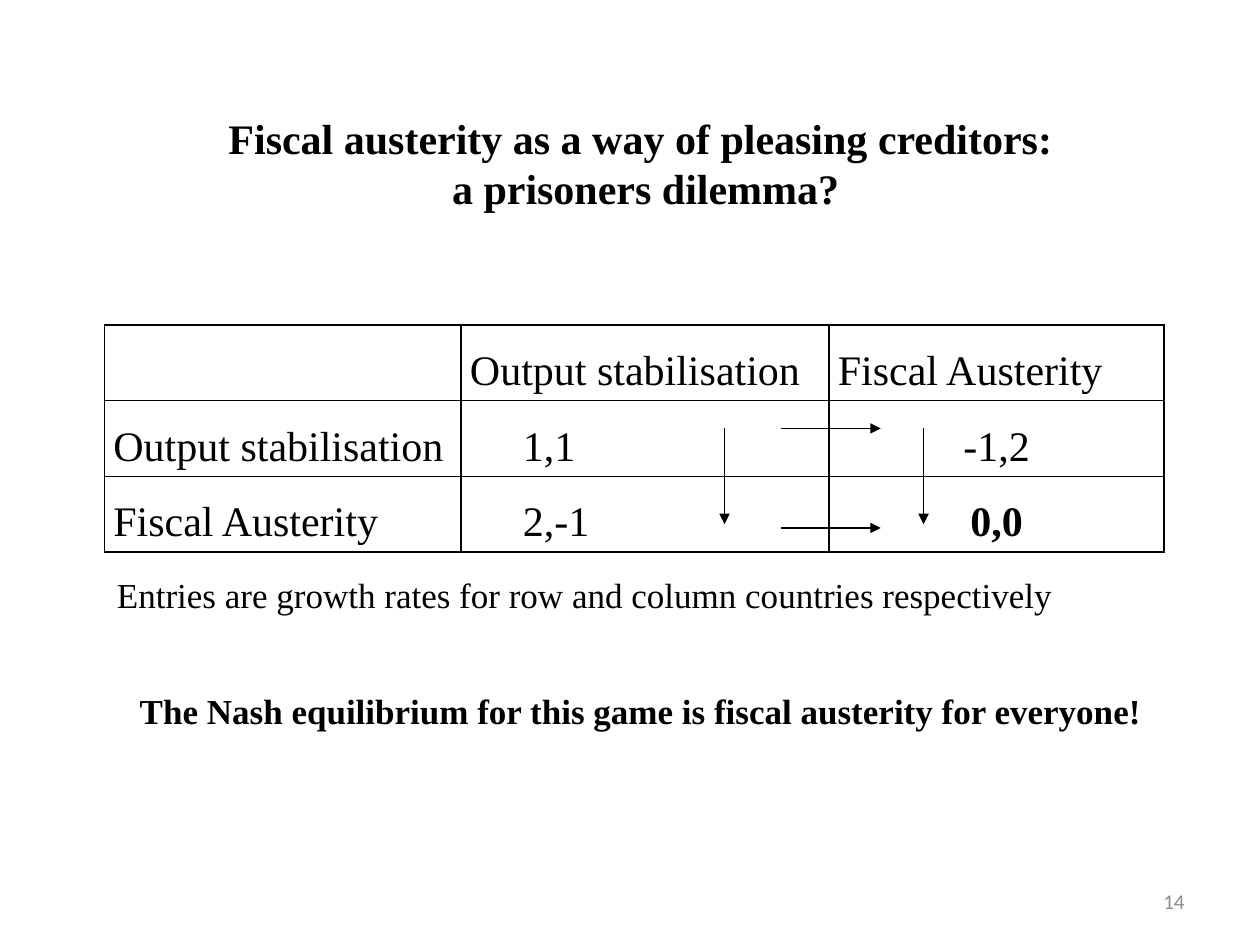
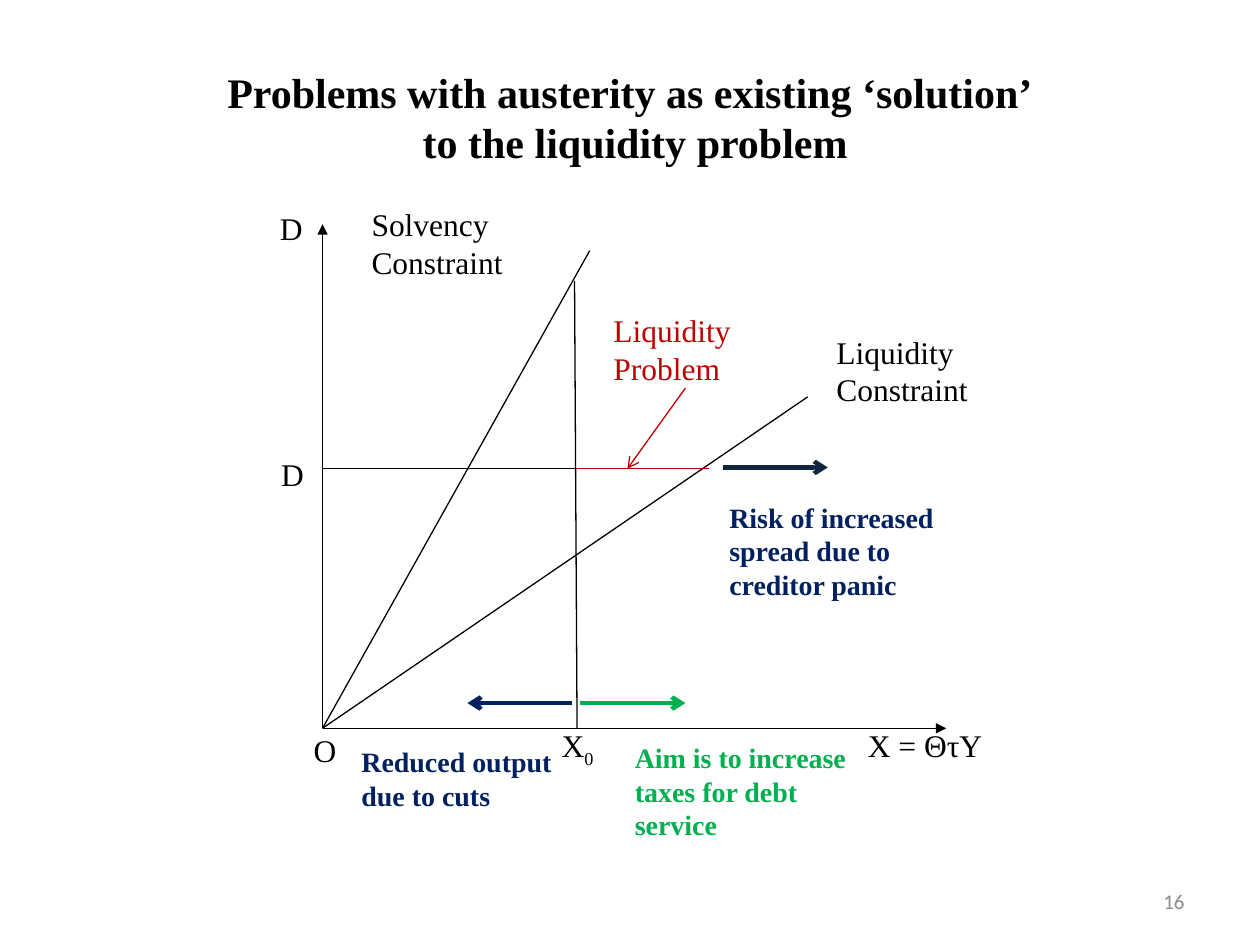
import pptx
import pptx.util
import pptx.dml.color
import pptx.enum.shapes
import pptx.enum.text
import pptx.oxml
import pptx.oxml.ns
import lxml.etree

PX = 9144  # EMU per px, 100 px to the inch
SERIF, SANS = "Times New Roman", "Calibri"
BLACK = pptx.dml.color.RGBColor(0x00, 0x00, 0x00)
WHITE = pptx.dml.color.RGBColor(0xFF, 0xFF, 0xFF)
GREY = pptx.dml.color.RGBColor(0x8C, 0x8C, 0x8C)
RED = pptx.dml.color.RGBColor(0xC0, 0x00, 0x00)
GREEN = pptx.dml.color.RGBColor(0x00, 0xB0, 0x50)
NAVY = pptx.dml.color.RGBColor(0x00, 0x20, 0x60)
DARK_BLUE = pptx.dml.color.RGBColor(0x0F, 0x24, 0x3E)
ALIGN = pptx.enum.text.PP_ALIGN
ANCHOR = pptx.enum.text.MSO_ANCHOR
qn = pptx.oxml.ns.qn


def write(frame, text, size=18, color=BLACK, bold=False, align=ALIGN.LEFT, font=SERIF,
          anchor=ANCHOR.TOP, spacing=None, subscript=""):
    """Fill a text frame, one paragraph per line of text."""
    frame.word_wrap = True
    frame.vertical_anchor = anchor
    for number, line in enumerate(text.split("\n")):
        paragraph = frame.add_paragraph() if number else frame.paragraphs[0]
        paragraph.alignment = align
        paragraph.line_spacing = spacing
        for part in filter(None, (line, subscript)):
            run = paragraph.add_run()
            run.text = part
            run.font.size = pptx.util.Pt(size)
            run.font.name = font
            run.font.bold = bold
            run.font.color.rgb = color
        if subscript:
            run._r.get_or_add_rPr().set("baseline", "-25000")


def draw_line(slide, start, end, color=BLACK, width=0.75, arrowhead=None):
    """Draw a straight line, with an optional arrowhead at its end."""
    line = slide.shapes.add_connector(pptx.enum.shapes.MSO_CONNECTOR.STRAIGHT,
                                      *(PX * value for value in (*start, *end)))
    line.line.color.rgb = color
    line.line.width = pptx.util.Pt(width)
    if arrowhead:
        lxml.etree.SubElement(line.line._get_or_add_ln(), qn("a:tailEnd"), type=arrowhead)
    lxml.etree.SubElement(line._element.spPr, qn("a:effectLst"))


deck = pptx.Presentation()
deck.slide_width, deck.slide_height = 1000 * PX, 750 * PX

# Titles and slide numbers
slides = []
for title, box, anchor, number in (
    ("Fiscal austerity as a way of pleasing creditors: \na prisoners dilemma?",
     (66, 84, 893, 91), ANCHOR.TOP, "14"),
    ("Problems with austerity as existing ‘solution’\n to the liquidity problem",
     (50, 30, 900, 125), ANCHOR.MIDDLE, "16"),
):
    slide = deck.slides.add_slide(deck.slide_layouts[5])
    heading = slide.shapes.title
    heading.left, heading.top, heading.width, heading.height = (PX * value for value in box)
    write(heading.text_frame, title, size=24, bold=True, align=ALIGN.CENTER, anchor=anchor)
    footer = slide.shapes.add_textbox(717 * PX, 695 * PX, 233 * PX, 40 * PX)
    write(footer.text_frame, number, size=12, color=GREY, font=SANS,
          align=ALIGN.RIGHT, anchor=ANCHOR.MIDDLE)
    slides.append(slide)
dilemma, austerity = slides

# Payoff table
payoffs = (
    ("", "Output stabilisation", "Fiscal Austerity "),
    ("Output stabilisation", "1,1", "-1,2"),
    ("Fiscal Austerity", "2,-1", "0,0"),
)
table = dilemma.shapes.add_table(3, 3, 83 * PX, 258 * PX, 841 * PX, 165 * PX).table
for column, width in zip(table.columns, (283, 292, 266)):
    column.width = width * PX
for r, row in enumerate(payoffs):
    table.rows[r].height = 55 * PX
    for c, entry in enumerate(row):
        cell = table.cell(r, c)
        cell.margin_left = (49 if r and c == 1 else 7) * PX
        cell.margin_right = 7 * PX
        cell.margin_top = cell.margin_bottom = 0
        write(cell.text_frame, entry, size=24, bold=entry == "0,0", spacing=1.5,
              align=ALIGN.CENTER if r and c == 2 else ALIGN.JUSTIFY)
        properties = cell._tc.get_or_add_tcPr()
        for side in ("lnL", "lnR", "lnT", "lnB"):
            border = lxml.etree.SubElement(properties, qn(f"a:{side}"), w="12700")
            fill = lxml.etree.SubElement(border, qn("a:solidFill"))
            lxml.etree.SubElement(fill, qn("a:srgbClr"), val=str(BLACK))
        cell.fill.background()

# Best responses
for y in (340, 419):
    draw_line(dilemma, (620, y), (699, y), arrowhead="triangle")
for x in (575, 733):
    draw_line(dilemma, (x, 340), (x, 416), arrowhead="triangle")

# Axes, constraints and shifts
origin = (256, 578)
for start, end, style in (
    (origin, (256, 178), dict(arrowhead="triangle")),
    (origin, (751, 578), dict(arrowhead="triangle")),
    (origin, (468, 199), {}),
    (origin, (641, 315), {}),
    ((256, 372), (563, 372), {}),
    ((456, 223), (458, 578), {}),
    ((457, 372), (563, 372), dict(color=RED)),
    ((544, 308), (498, 372), dict(color=RED, arrowhead="arrow")),
    ((460, 558), (544, 558), dict(color=GREEN, width=2.5, arrowhead="arrow")),
    ((454, 558), (371, 558), dict(color=NAVY, width=2.5, arrowhead="arrow")),
    ((574, 371), (657, 371), dict(color=DARK_BLUE, width=2.5, arrowhead="arrow")),
):
    draw_line(austerity, start, end, **style)

# Captions and diagram labels
remark = dict(size=16, bold=True)
for slide, box, text, style in (
    (dilemma, (83, 450, 783, 44),
     "Entries are growth rates for row and column countries respectively", dict(size=20)),
    (dilemma, (92, 542, 833, 44),
     "The Nash equilibrium for this game is fiscal austerity for everyone!",
     dict(size=20, bold=True, align=ALIGN.CENTER)),
    (austerity, (197, 356, 54, 45), "D", dict(align=ALIGN.RIGHT)),
    (austerity, (158, 161, 92, 44), "D", dict(align=ALIGN.RIGHT)),
    (austerity, (679, 571, 156, 48), "X = ΘτY", {}),
    (austerity, (239, 575, 58, 30), "O", {}),
    (austerity, (436, 571, 63, 48), "X", dict(subscript="0")),
    (austerity, (285, 158, 142, 62), "Solvency Constraint", {}),
    (austerity, (654, 259, 131, 56), "Liquidity Constraint", {}),
    (austerity, (477, 242, 165, 59), "Liquidity Problem", dict(color=RED)),
    (austerity, (569, 392, 192, 84), "Risk of increased spread due to creditor panic",
     dict(color=NAVY, **remark)),
    (austerity, (494, 583, 205, 84), "Aim is to increase taxes for debt service",
     dict(color=GREEN, **remark)),
    (austerity, (277, 586, 181, 84), "Reduced output due to cuts",
     dict(color=NAVY, **remark)),
):
    label = slide.shapes.add_textbox(*(PX * value for value in box))
    write(label.text_frame, text, **style)

deck.save("out.pptx")
